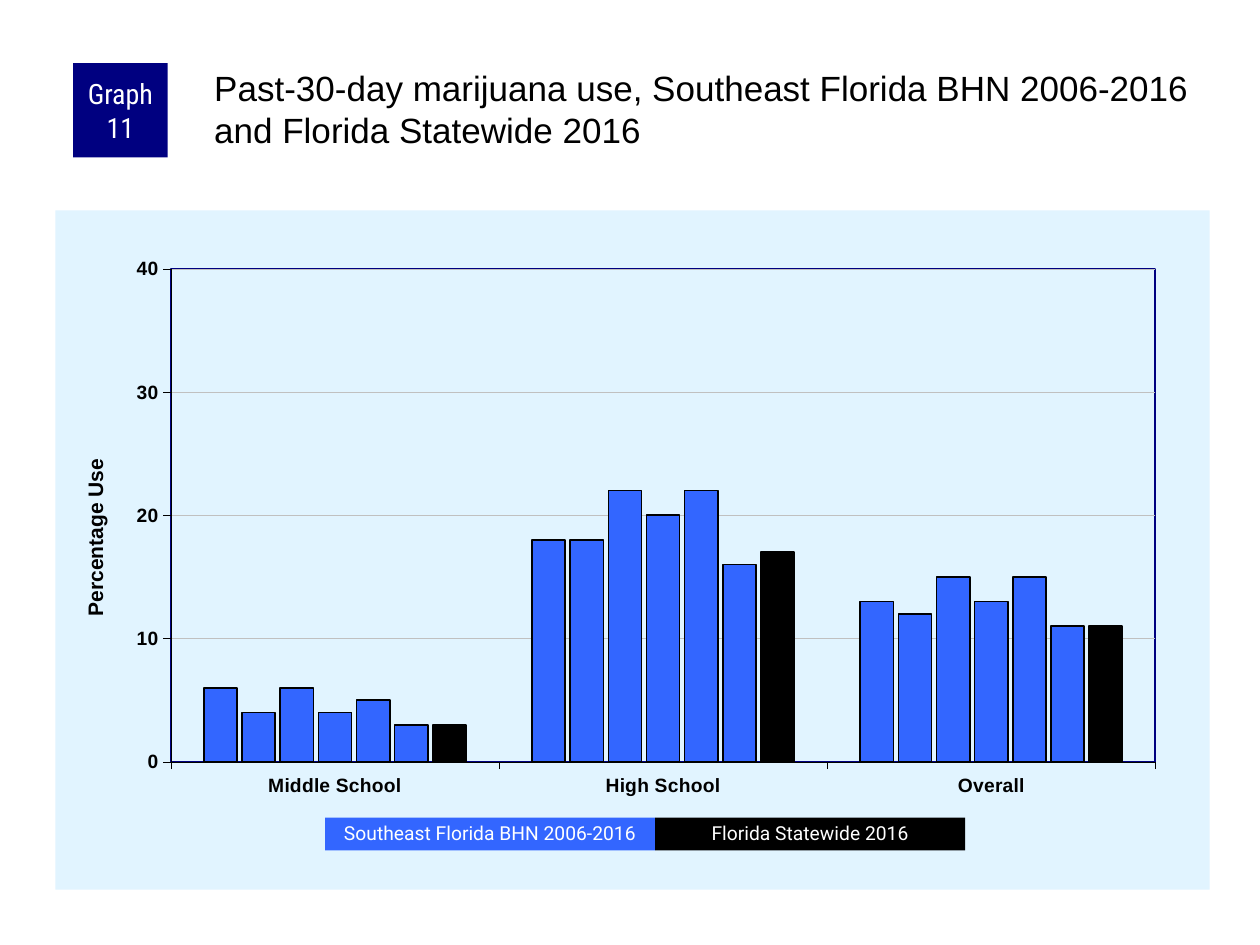
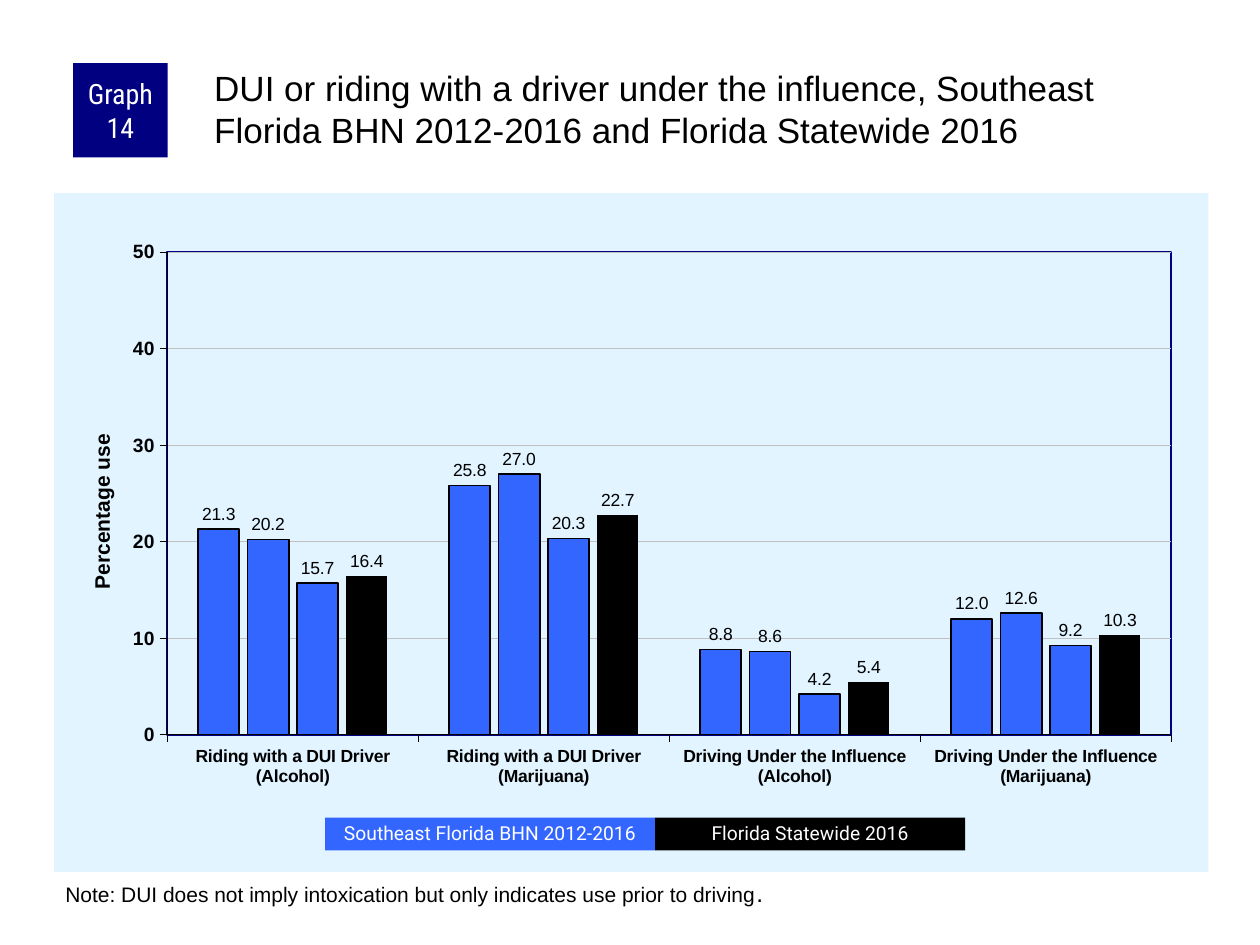
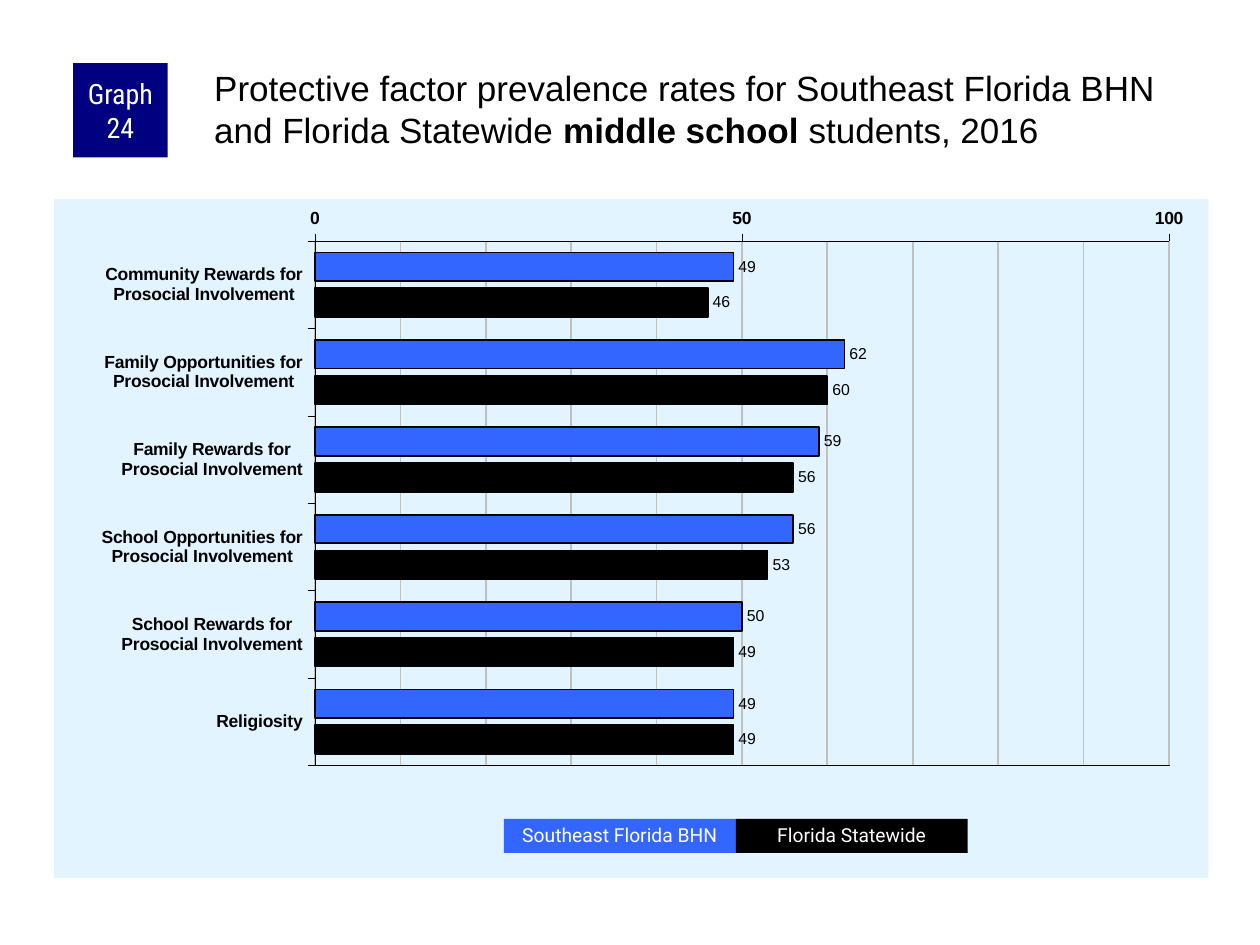
import pptx
import pptx.chart.data
import pptx.dml.color
import pptx.enum.chart
import pptx.enum.shapes
import pptx.enum.text
import pptx.oxml
import pptx.oxml.ns
import pptx.util

Inches = pptx.util.Inches
Pt = pptx.util.Pt
qn = pptx.oxml.ns.qn
CHART = pptx.enum.chart

BLACK, WHITE, NAVY = "000000", "FFFFFF", "000080"
REGION, PANEL, GRID = "3366FF", "E1F4FF", "C0C0C0"
PANEL_SIZE = (9.16, 5.39)

GRAPHS = [
    {
        "number": 11,
        "title": [("Past-30-day marijuana use, Southeast Florida BHN 2006-2016 "
                   "and Florida Statewide 2016", {})],
        "kind": CHART.XL_CHART_TYPE.COLUMN_CLUSTERED,
        "at": (0.44, 1.67),
        "plot": (0.1, 0.086, 0.853, 0.726),
        "border": (NAVY, 1),
        "gap": 200, "overlap": -15,
        "categories": ["Middle School", "High School", "Overall"],
        "series": [(6, 18, 13), (4, 18, 12), (6, 22, 15), (4, 20, 13),
                   (5, 22, 15), (3, 16, 11), (3, 17, 11)],
        "outlines": [1] * 7,
        "labels": None,
        "scale": (40, 10), "grid_width": 0.25,
        "axis_sizes": (11, 11),
        "axis_title": ("Percentage Use", 0.02, 0.36),
        "legend": ("Southeast Florida BHN 2006-2016", "Florida Statewide 2016"),
        "chips": (2.58, 6.49, (2.62, 2.46), 0.26),
    },
    {
        "number": 14,
        "title": [("DUI or riding with a driver under the influence, Southeast "
                   "Florida BHN 2012-2016 and Florida Statewide 2016", {})],
        "kind": CHART.XL_CHART_TYPE.COLUMN_CLUSTERED,
        "at": (0.43, 1.53),
        "plot": (0.098, 0.087, 0.87, 0.711),
        "border": (NAVY, 1),
        "gap": 150, "overlap": -20,
        "categories": ["Riding with a DUI Driver (Alcohol)",
                       "Riding with a DUI Driver (Marijuana)",
                       "Driving Under the Influence (Alcohol)",
                       "Driving Under the Influence (Marijuana)"],
        "series": [(21.3, 25.8, 8.8, 12.0), (20.2, 27.0, 8.6, 12.6),
                   (15.7, 20.3, 4.2, 9.2), (16.4, 22.7, 5.4, 10.3)],
        "outlines": [1, 1, 0.75, 0],
        "labels": ("0.0", 10),
        "scale": (50, 10), "grid_width": 0.25,
        "axis_sizes": (10, 11),
        "axis_title": ("Percentage use", 0.027, 0.35),
        "legend": ("Southeast Florida BHN 2012-2016", "Florida Statewide 2016"),
        "chips": (2.58, 6.49, (2.62, 2.46), 0.26),
        "note": [("Note: DUI does not imply intoxication but only indicates "
                  "use prior to driving", {}), (".", {"size": 14})],
    },
    {
        "number": 24,
        "title": [("Protective factor prevalence rates for Southeast Florida BHN "
                   "and Florida Statewide ", {}),
                  ("middle school ", {"bold": True}), ("students, 2016", {})],
        "kind": CHART.XL_CHART_TYPE.BAR_CLUSTERED,
        "at": (0.43, 1.58),
        "plot": (0.226, 0.062, 0.74, 0.772),
        "border": (BLACK, 0.25),
        "gap": 80, "overlap": -25,
        "categories": ["Community Rewards for\nProsocial Involvement",
                       "Family Opportunities for\nProsocial Involvement",
                       "Family Rewards for\nProsocial Involvement",
                       "School Opportunities for\nProsocial Involvement",
                       "School Rewards for\nProsocial Involvement",
                       "Religiosity"],
        "series": [(49, 62, 59, 56, 50, 49), (46, 60, 56, 53, 49, 49)],
        "outlines": [1, 1],
        "labels": ("0", 9),
        "scale": (100, 50), "minor": 10, "grid_width": 1,
        "axis_sizes": (10, 10),
        "axis_title": None,
        "legend": ("Southeast Florida BHN", "Florida Statewide"),
        "chips": (4, 6.5, (1.84, 1.84), 0.27),
    },
]


def color(value):
    return pptx.dml.color.RGBColor.from_string(value)


def style_font(font, size, fill=BLACK, face="Arial", bold=False):
    font.size = Pt(size)
    font.name = face
    font.bold = bold
    font.color.rgb = color(fill)


def style_line(line, fill, width):
    line.color.rgb = color(fill)
    line.width = Pt(width)


def write(shape, runs, align=None, spacing=None, anchor="TOP", insets=None, **font):
    frame = shape.text_frame
    frame.word_wrap = True
    frame.vertical_anchor = pptx.enum.text.MSO_ANCHOR[anchor]
    if insets:
        (frame.margin_left, frame.margin_top,
         frame.margin_right, frame.margin_bottom) = map(Inches, insets)
    paragraph = frame.paragraphs[0]
    if align:
        paragraph.alignment = pptx.enum.text.PP_ALIGN[align]
    if spacing:
        paragraph.line_spacing = spacing
    for words, changes in [(runs, {})] if isinstance(runs, str) else runs:
        run = paragraph.add_run()
        run.text = words
        style_font(run.font, **{**font, **changes})


def add_text(slide, box, runs, **style):
    write(slide.shapes.add_textbox(*map(Inches, box)), runs, **style)


def add_block(slide, box, fill, words, **style):
    block = slide.shapes.add_shape(pptx.enum.shapes.MSO_SHAPE.RECTANGLE, *map(Inches, box))
    block.shadow.inherit = False
    block.fill.solid()
    block.fill.fore_color.rgb = color(fill)
    block.line.fill.background()
    write(block, words, align="CENTER", anchor="MIDDLE", fill=WHITE, **style)


def chart_xml(tag, content):
    return pptx.oxml.parse_xml(
        f'<c:{tag} {pptx.oxml.ns.nsdecls("c", "a")}>{content}</c:{tag}>')


def solid(value):
    return f'<a:solidFill><a:srgbClr val="{value}"/></a:solidFill>'


def outline_xml(value, width):
    return f'<a:ln w="{int(Pt(width))}">{solid(value)}</a:ln>'


def set_layout(parent, index, target="", **places):
    for layout in parent.findall(qn("c:layout")):
        parent.remove(layout)
    content = target + '<c:xMode val="edge"/><c:yMode val="edge"/>'
    content += "".join(f'<c:{key} val="{value}"/>' for key, value in places.items())
    parent.insert(index, chart_xml("layout", f"<c:manualLayout>{content}</c:manualLayout>"))


def style_panel(chart, graph):
    space = chart.element
    plot_area = space.find(".//" + qn("c:plotArea"))
    set_layout(plot_area, 0, '<c:layoutTarget val="inner"/>', **dict(zip("xywh", graph["plot"])))
    plot_area.append(chart_xml("spPr", "<a:noFill/>" + outline_xml(*graph["border"])))
    space.find(qn("c:chart")).addnext(chart_xml(
        "spPr", solid(PANEL) + "<a:ln><a:noFill/></a:ln>"))


def style_axes(chart, graph):
    categories, values = chart.category_axis, chart.value_axis
    for axis, size in zip((categories, values), graph["axis_sizes"]):
        style_font(axis.tick_labels.font, size, bold=True)
        style_line(axis.format.line, BLACK, 0.25)
        axis.major_tick_mark = CHART.XL_TICK_MARK.OUTSIDE
        axis.minor_tick_mark = CHART.XL_TICK_MARK.NONE
    values.minimum_scale = 0
    values.maximum_scale, values.major_unit = graph["scale"]
    values.tick_labels.number_format = "0"
    values.tick_labels.number_format_is_linked = False
    style_line(values.major_gridlines.format.line, GRID, graph["grid_width"])
    if "minor" in graph:
        values.minor_unit = graph["minor"]
        values.has_minor_gridlines = True
        minor_gridlines = chart.element.find(".//" + qn("c:minorGridlines"))
        minor_gridlines.append(chart_xml("spPr", outline_xml(GRID, graph["grid_width"])))
    if graph["kind"] == CHART.XL_CHART_TYPE.BAR_CLUSTERED:
        categories.reverse_order = True
        categories.crosses = CHART.XL_AXIS_CROSSES.MAXIMUM
    if graph["axis_title"]:
        words, x, y = graph["axis_title"]
        title = values.axis_title
        run = title.text_frame.paragraphs[0].add_run()
        run.text = words
        style_font(run.font, 12, bold=True)
        set_layout(title._element, 1, x=x, y=y)


def style_series(chart, graph):
    plot = chart.plots[0]
    plot.vary_by_categories = False
    plot.gap_width, plot.overlap = graph["gap"], graph["overlap"]
    fills = [REGION] * (len(graph["series"]) - 1) + [BLACK]
    for series, fill, outline in zip(plot.series, fills, graph["outlines"]):
        series.invert_if_negative = False
        series.format.fill.solid()
        series.format.fill.fore_color.rgb = color(fill)
        if outline:
            style_line(series.format.line, BLACK, outline)
        else:
            series.format.line.fill.background()
        if graph["labels"]:
            labels = series.data_labels
            labels.number_format, size = graph["labels"]
            labels.number_format_is_linked = False
            labels.show_value = True
            labels.position = CHART.XL_LABEL_POSITION.OUTSIDE_END
            style_font(labels.font, size)


def add_graph(slide, graph):
    data = pptx.chart.data.CategoryChartData()
    data.categories = graph["categories"]
    for number, values in enumerate(graph["series"], 1):
        data.add_series(f"Series {number}", values)
    chart = slide.shapes.add_chart(
        graph["kind"], *map(Inches, graph["at"] + PANEL_SIZE), data).chart
    chart.has_legend = False
    chart.has_title = False
    style_font(chart.font, 11)
    style_panel(chart, graph)
    style_axes(chart, graph)
    style_series(chart, graph)


def add_legend(slide, graph):
    left, top, widths, height = graph["chips"]
    for words, fill, width in zip(graph["legend"], (REGION, BLACK), widths):
        add_block(slide, (left, top, width, height), fill, words,
                  size=11, face="Roboto", spacing=0.9)
        left += width


def main():
    deck = pptx.Presentation()
    deck.slide_width, deck.slide_height = Inches(10), Inches(7.5)
    for graph in GRAPHS:
        slide = deck.slides.add_slide(deck.slide_layouts[6])
        add_graph(slide, graph)
        add_block(slide, (0.58, 0.5, 0.75, 0.75), NAVY, f"Graph {graph['number']}",
                  size=16, face="Roboto Condensed", insets=(0.05, 0, 0.05, 0))
        add_text(slide, (1.67, 0.5, 7.92, 0.83), graph["title"],
                 size=20, insets=(0.03, 0.03, 0, 0))
        if "note" in graph:
            add_text(slide, (0.42, 6.92, 9.17, 0.34), graph["note"], size=12)
        add_legend(slide, graph)
    deck.save("out.pptx")


if __name__ == "__main__":
    main()
